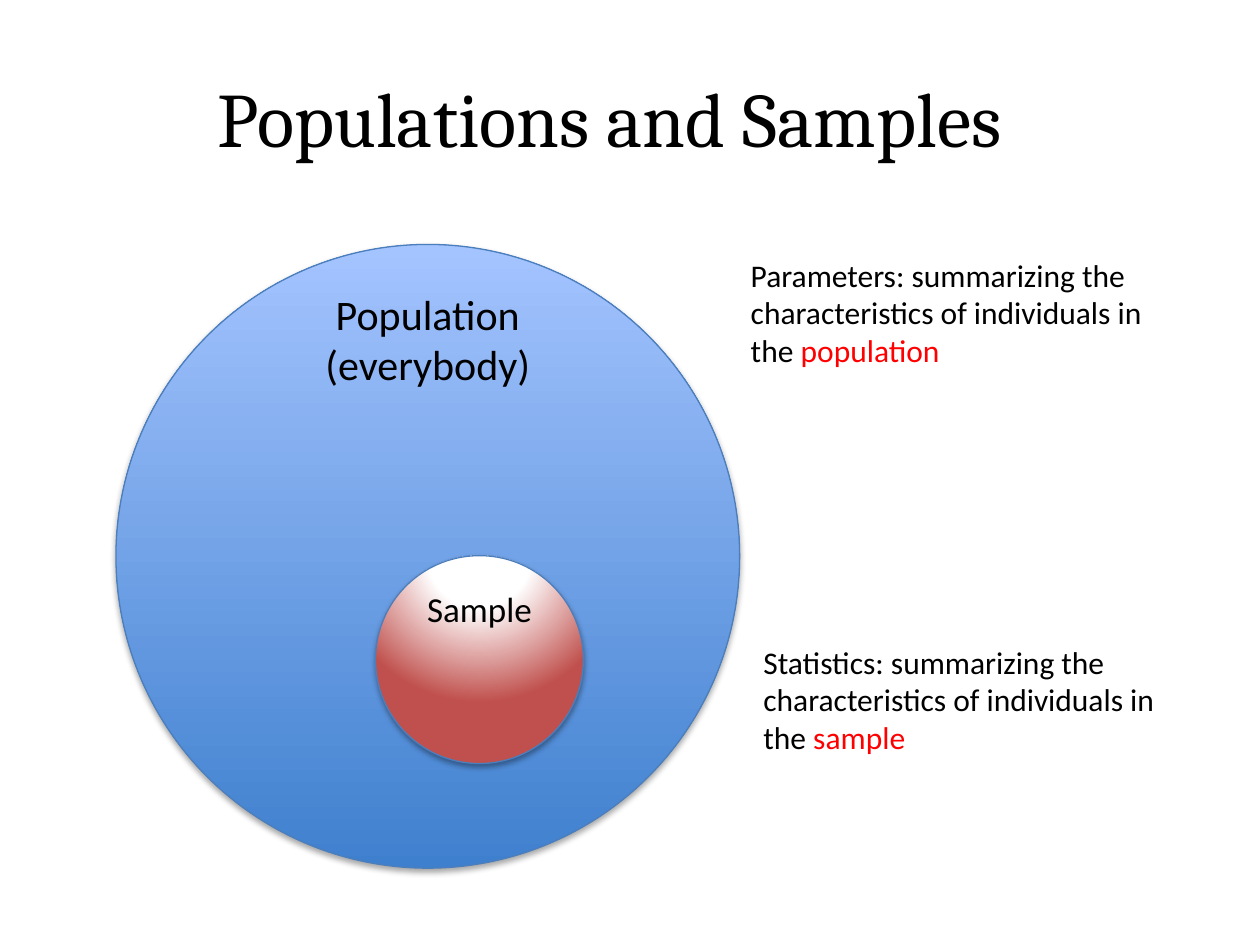
from dataclasses import dataclass
from typing import Optional

from lxml import etree
from pptx import Presentation
from pptx.dml.color import RGBColor
from pptx.enum import shapes, text
from pptx.util import Inches, Pt

BLACK = RGBColor(0x00, 0x00, 0x00)
RED = RGBColor(0xFF, 0x00, 0x00)
WHITE = RGBColor(0xFF, 0xFF, 0xFF)
EDGE = RGBColor(0x4B, 0x7E, 0xBC)
DEEP = RGBColor(0x3F, 0x80, 0xCE)
PALE = RGBColor(0xA4, 0xC4, 0xFF)
BRICK = RGBColor(0xC0, 0x50, 0x4D)

NS = 'xmlns:a="http://schemas.openxmlformats.org/drawingml/2006/main"'
LINEAR = '<a:lin ang="16200000" scaled="0"/>'
RADIAL = ('<a:path path="circle"><a:fillToRect l="50000" t="-80000" '
          'r="50000" b="180000"/></a:path>')
SHADOW = (f'<a:effectLst {NS}><a:outerShdw blurRad="40000" dist="23000" '
          'dir="5400000" rotWithShape="0"><a:srgbClr val="000000">'
          '<a:alpha val="35000"/></a:srgbClr></a:outerShdw></a:effectLst>')


@dataclass(frozen=True)
class Disc:
    left: float
    top: float
    size: float
    stops: tuple[tuple[int, RGBColor], ...]
    mode: str


@dataclass(frozen=True)
class Label:
    box: tuple[float, float, float, float]
    lines: tuple[str, ...]
    size: int
    key: str = ""
    font: str = "Calibri"
    mid: bool = True
    fill: Optional[RGBColor] = None


def draw_disc(slide, disc: Disc) -> None:
    shape = slide.shapes.add_shape(
        shapes.MSO_SHAPE.OVAL, Inches(disc.left), Inches(disc.top),
        Inches(disc.size), Inches(disc.size))
    shape.line.color.rgb = EDGE
    shape.line.width = Pt(0.75)
    shape.fill.background()
    stops = "".join(f'<a:gs pos="{pos * 1000}"><a:srgbClr val="{tint}"/></a:gs>'
                    for pos, tint in disc.stops)
    grad = etree.fromstring(f'<a:gradFill {NS} rotWithShape="1"><a:gsLst>{stops}'
                            f'</a:gsLst>{disc.mode}</a:gradFill>')
    props = shape.element.spPr
    props.replace(props.find("{*}noFill"), grad)
    props.append(etree.fromstring(SHADOW))


def add_run(para, words: str, label: Label, tint: RGBColor) -> None:
    run = para.add_run()
    run.text = words
    run.font.name = label.font
    run.font.size = Pt(label.size)
    run.font.color.rgb = tint


def draw_label(slide, label: Label) -> None:
    place = [Inches(side) for side in label.box]
    if label.fill is None:
        shape = slide.shapes.add_textbox(*place)
    else:
        shape = slide.shapes.add_shape(shapes.MSO_SHAPE.RECTANGLE, *place)
        shape.shadow.inherit = False
        shape.fill.solid()
        shape.fill.fore_color.rgb = label.fill
        shape.line.fill.background()
    frame = shape.text_frame
    frame.word_wrap = True
    title = label.font == "Cambria"
    frame.vertical_anchor = (text.MSO_ANCHOR.MIDDLE if title
                             else text.MSO_ANCHOR.TOP)
    frame.auto_size = (text.MSO_AUTO_SIZE.NONE if title
                       else text.MSO_AUTO_SIZE.SHAPE_TO_FIT_TEXT)
    para = frame.paragraphs[0]
    para.alignment = text.PP_ALIGN.CENTER if label.mid else text.PP_ALIGN.LEFT
    for row, line in enumerate(label.lines):
        if row:
            para.add_line_break()
        add_run(para, line, label, BLACK)
    if label.key:
        add_run(para, label.key, label, RED)


def note(left: float, top: float, term: str, key: str,
         fill: Optional[RGBColor] = None) -> Label:
    words = f"{term}: summarizing the characteristics of individuals in the "
    return Label((left, top, 3.39, 1.01), (words,), 18, key, mid=False, fill=fill)


ITEMS = (
    Label((0.34, 0.3, 9, 1.25), ("Populations and Samples",), 44, font="Cambria"),
    Disc(0.92, 1.94, 4.95, ((0, DEEP), (100, PALE)), LINEAR),
    Label((2.32, 2.24, 2.15, 0.91), ("Population", "(everybody)"), 24),
    note(5.86, 1.98, "Parameters", "population", WHITE),
    Disc(2.98, 4.41, 1.65, ((0, WHITE), (35, WHITE), (100, BRICK)), RADIAL),
    Label((2.9, 4.61, 1.81, 0.44), ("Sample",), 20),
    note(5.96, 5.05, "Statistics", "sample"),
)


def main() -> None:
    deck = Presentation()
    deck.slide_width, deck.slide_height = Inches(10), Inches(7.5)
    slide = deck.slides.add_slide(deck.slide_layouts[6])
    for item in ITEMS:
        if isinstance(item, Disc):
            draw_disc(slide, item)
        else:
            draw_label(slide, item)
    deck.save("out.pptx")


if __name__ == "__main__":
    main()
